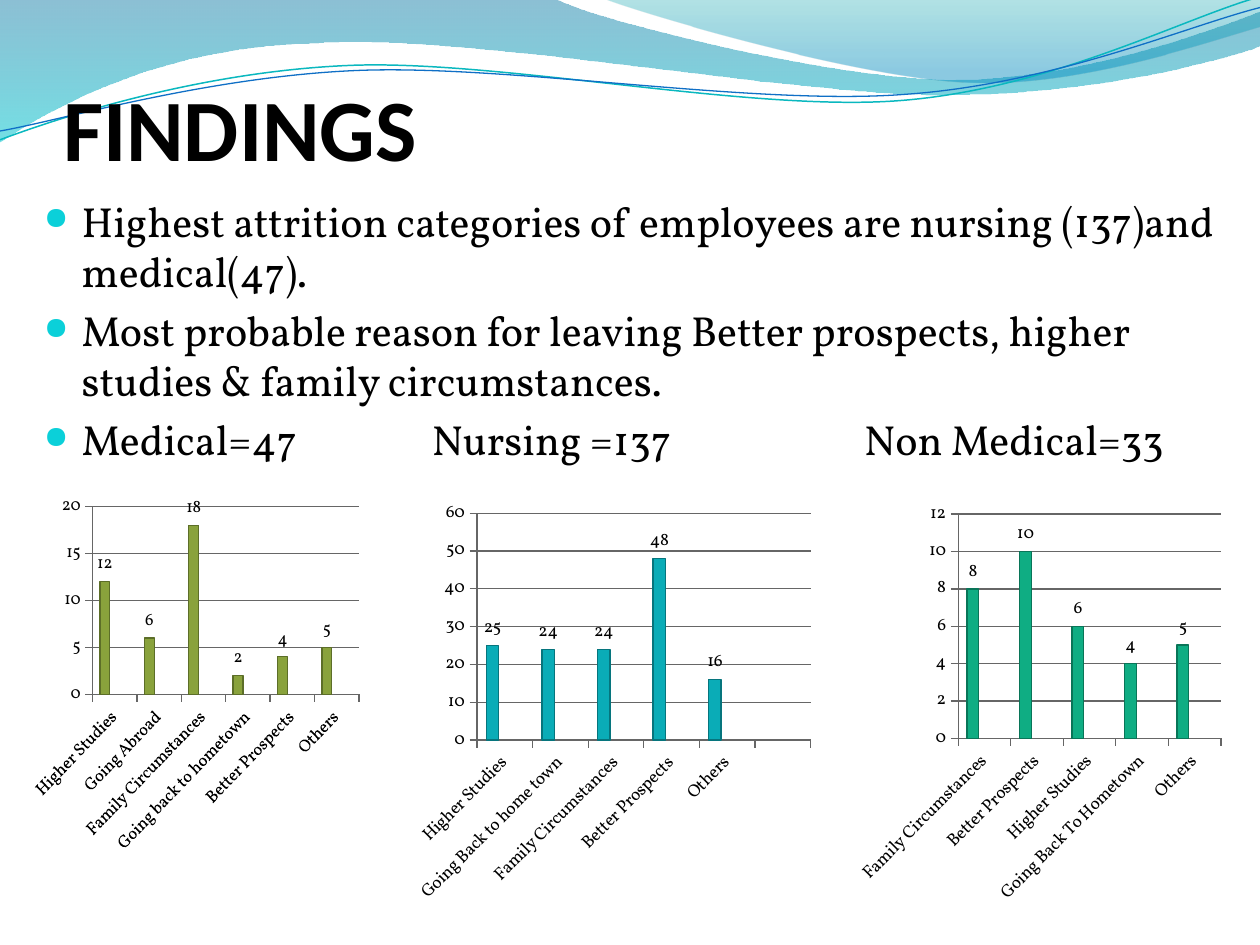
from lxml import etree
from pptx import Presentation
from pptx.chart.data import CategoryChartData
from pptx.dml.color import RGBColor
from pptx.enum import chart as charts, text
from pptx.oxml import parse_xml
from pptx.oxml.ns import nsdecls, qn
from pptx.util import Inches, Pt

BLACK = RGBColor(0x00, 0x00, 0x00)
GREY = RGBColor(0x66, 0x66, 0x66)
DEEP_BLUE = RGBColor(0x00, 0x74, 0xA1)
TURQUOISE = RGBColor(0x00, 0xC6, 0xCF)
TEAL = RGBColor(0x00, 0xA1, 0xA9)
SKY = RGBColor(0x00, 0x8B, 0xBF)
LINE_TEAL = RGBColor(0x0A, 0xB8, 0xBF)
LINE_BLUE = RGBColor(0x0F, 0x6F, 0xC6)
OLIVE, OLIVE_EDGE = RGBColor(0x89, 0xA2, 0x3C), RGBColor(0x5C, 0x6E, 0x28)
CYAN, CYAN_EDGE = RGBColor(0x0A, 0xAC, 0xB7), RGBColor(0x06, 0x75, 0x7D)
GREEN, GREEN_EDGE = RGBColor(0x0F, 0xAD, 0x83), RGBColor(0x09, 0x75, 0x58)
BODY_FONT = "Vollkorn"
BULLET = "0BD0D9"

deck = Presentation()
deck.slide_width, deck.slide_height = Inches(10), Inches(7.5)
page = deck.slides.add_slide(deck.slide_layouts[5])


def draw_curve(start, segments, closed):
    """Segments are (x, y) line ends or six-number cubic curves, in inches."""
    points = [(Inches(s[i]), Inches(s[i + 1])) for s in segments for i in range(0, len(s), 2)]
    builder = page.shapes.build_freeform(Inches(start[0]), Inches(start[1]))
    builder.add_line_segments(points, close=closed)
    shape = builder.convert_to_shape()
    shape.shadow.inherit = False
    # Turn each run of three line ends that belongs to a curve into one Bezier
    steps = iter(list(shape._element.iter(qn("a:lnTo"))))
    for segment in segments:
        first = next(steps)
        if len(segment) == 6:
            first.tag = qn("a:cubicBezTo")
            for _ in range(2):
                control = next(steps)
                first.append(control[0])
                control.getparent().remove(control)
    return shape


def write_text(para, words, size, font, bold=False):
    span = para.add_run()
    span.text = words
    span.font.size, span.font.name, span.font.bold = Pt(size), font, bold
    span.font.color.rgb = BLACK


# Wave bands: start, segments, then (colour, position, opacity %) stops
bands = [
    ((0, 0), [(4.4, -0.01), (4.76, 0.17, 6.64, 0.63, 7.58, 0.63),
              (8.53, 0.63, 9.58, 0.26, 10, 0.09), (10.01, 0.36),
              (9.83, 0.44, 8.7, 0.76, 7.46, 0.75), (6.22, 0.75, 3.82, 0.28, 2.57, 0.34),
              (1.29, 0.36, 0.46, 0.83, -0.01, 1.13)],
     [(DEEP_BLUE, 0, 45), (TURQUOISE, 1, 55)]),
    ((4.79, -0.01), [(5.09, 0.11, 6.82, 0.62, 7.69, 0.65),
                     (8.56, 0.69, 9.61, 0.32, 10, 0.21), (10, 0)],
     [(TEAL, 0, 30), (SKY, 0.8, 45)]),
]
for start, segments, stops in bands:
    band = draw_curve(start, segments, True)
    band.line.fill.background()
    band.fill.gradient()
    band.fill.gradient_angle = 270
    for stop, (color, position, opacity) in zip(band.fill.gradient_stops, stops):
        stop.color.rgb, stop.position = color, position
    fill_colors = band._element.spPr.iter(qn("a:srgbClr"))
    for color_node, (color, position, opacity) in zip(list(fill_colors), stops):
        etree.SubElement(color_node, qn("a:alpha")).set("val", str(opacity * 1000))

wave_lines = [
    ((0, 1.11), [(0.48, 0.93, 1.58, 0.57, 2.77, 0.52), (3.95, 0.47, 5.93, 0.89, 7.13, 0.8),
                 (8.33, 0.71, 9.38, 0.15, 9.98, -0.02)], LINE_TEAL, 0.85),
    ((0, 1.04), [(0.47, 0.96, 1.64, 0.61, 2.83, 0.56), (4.03, 0.51, 5.97, 0.84, 7.17, 0.75),
                 (8.36, 0.67, 9.41, 0.21, 10, 0.06)], LINE_BLUE, 0.75),
]
for start, segments, color, width in wave_lines:
    wave = draw_curve(start, segments, False)
    wave.fill.background()
    wave.line.color.rgb, wave.line.width = color, Pt(width)

# Title, in front of the waves
title = page.shapes.title
title.left, title.top, title.width, title.height = map(Inches, (0.5, 0.42, 9, 1))
page.shapes._spTree.append(title._element)
frame = title.text_frame
frame.margin_left = frame.margin_right = frame.margin_bottom = 0
frame.vertical_anchor = text.MSO_ANCHOR.BOTTOM
frame.auto_size = text.MSO_AUTO_SIZE.NONE
frame.paragraphs[0].alignment = text.PP_ALIGN.LEFT
write_text(frame.paragraphs[0], "FINDINGS", size=50, font="Calibri", bold=True)

# Bullets; tab stops place the chart headings in the last one
findings = [
    "Highest attrition categories of employees are nursing (137)and medical(47).",
    "Most probable reason for leaving Better prospects, higher studies & family circumstances.",
    "Medical=47\tNursing =137\tNon Medical=33",
]
box = page.shapes.add_textbox(Inches(0.25), Inches(1.5), Inches(9.75), Inches(5.75))
box.text_frame.word_wrap = True
for index, finding in enumerate(findings):
    para = box.text_frame.add_paragraph() if index else box.text_frame.paragraphs[0]
    para.space_before = Pt(4.8)
    write_text(para, finding, size=24, font=BODY_FONT)
    props = para._p.get_or_add_pPr()
    props.set("marL", str(Inches(0.3)))
    props.set("indent", str(Inches(-0.3)))
    color_node = etree.SubElement(props, qn("a:buClr"))
    etree.SubElement(color_node, qn("a:srgbClr")).set("val", BULLET)
    etree.SubElement(props, qn("a:buSzPct")).set("val", "74000")
    etree.SubElement(props, qn("a:buChar")).set("char", "●")
    if "\t" in finding:
        tabs = etree.SubElement(props, qn("a:tabLst"))
        for position in (3.08, 6.51):
            tab = etree.SubElement(tabs, qn("a:tab"))
            tab.set("pos", str(Inches(position)))
            tab.set("algn", "l")

# Charts: left, width, fill, edge, axis maximum, axis step, plot area, reasons, counts
reason_charts = [
    (0.25, 2.75, OLIVE, OLIVE_EDGE, 20, 5, (0.142, 0.03, 0.801, 0.448),
     ["Higher Studies", "Going Abroad", "Family Circumstances", "Going back to hometown",
      "Better Prospects", "Others"], [12, 6, 18, 2, 4, 5]),
    (3.25, 3.25, CYAN, CYAN_EDGE, 60, 10, (0.165, 0.046, 0.815, 0.541),
     ["Higher Studies", "Going Back to home town", "Family Circumstances",
      "Better Prospects", "Others"], [25, 24, 24, 48, 16, None]),
    (6.75, 3, GREEN, GREEN_EDGE, 12, 2, None,
     ["Family Circumstances", "Better Prospects", "Higher Studies",
      "Going Back To Hometown", "Others"], [8, 10, 6, 4, 5]),
]
for left, width, color, edge, maximum, step, plot_area, reasons, counts in reason_charts:
    data = CategoryChartData()
    data.categories = reasons
    data.add_series("Series 1", counts)
    for name in ("Series 2", "Series 3"):
        data.add_series(name, [None] * len(counts))
    chart = page.shapes.add_chart(charts.XL_CHART_TYPE.COLUMN_CLUSTERED, Inches(left),
                                  Inches(3.92), Inches(width), Inches(3.33), data).chart
    chart.has_legend = chart.has_title = False
    chart.font.size, chart.font.name = Pt(10), BODY_FONT
    chart.font.color.rgb = BLACK
    plot = chart.plots[0]
    plot.vary_by_categories, plot.gap_width, plot.overlap = False, 150, 0
    series = plot.series[0]
    series.format.fill.solid()
    series.format.fill.fore_color.rgb = color
    series.format.line.color.rgb, series.format.line.width = edge, Pt(0.75)
    series.data_labels.show_value = True
    series.data_labels.position = charts.XL_LABEL_POSITION.OUTSIDE_END
    values = chart.value_axis
    values.minimum_scale, values.maximum_scale, values.major_unit = 0, maximum, step
    values.major_gridlines.format.line.color.rgb = GREY
    for axis in (values, chart.category_axis):
        axis.major_tick_mark = charts.XL_TICK_MARK.OUTSIDE
        axis.format.line.color.rgb = GREY
        axis.tick_labels.font.size = Pt(10)
    labels = chart.category_axis._element.find(qn("c:txPr"))
    labels.find(qn("a:bodyPr")).set("rot", "-2700000")
    if plot_area:
        area = chart._chartSpace.chart.plotArea
        for old_layout in area.findall(qn("c:layout")):
            area.remove(old_layout)
        settings = [("layoutTarget", "inner"), ("xMode", "edge"), ("yMode", "edge"),
                    *zip("xywh", plot_area)]
        nodes = "".join(f'<c:{tag} val="{value}"/>' for tag, value in settings)
        area.insert(0, parse_xml(f'<c:layout {nsdecls("c")}><c:manualLayout>{nodes}'
                                 "</c:manualLayout></c:layout>"))

deck.save("out.pptx")
